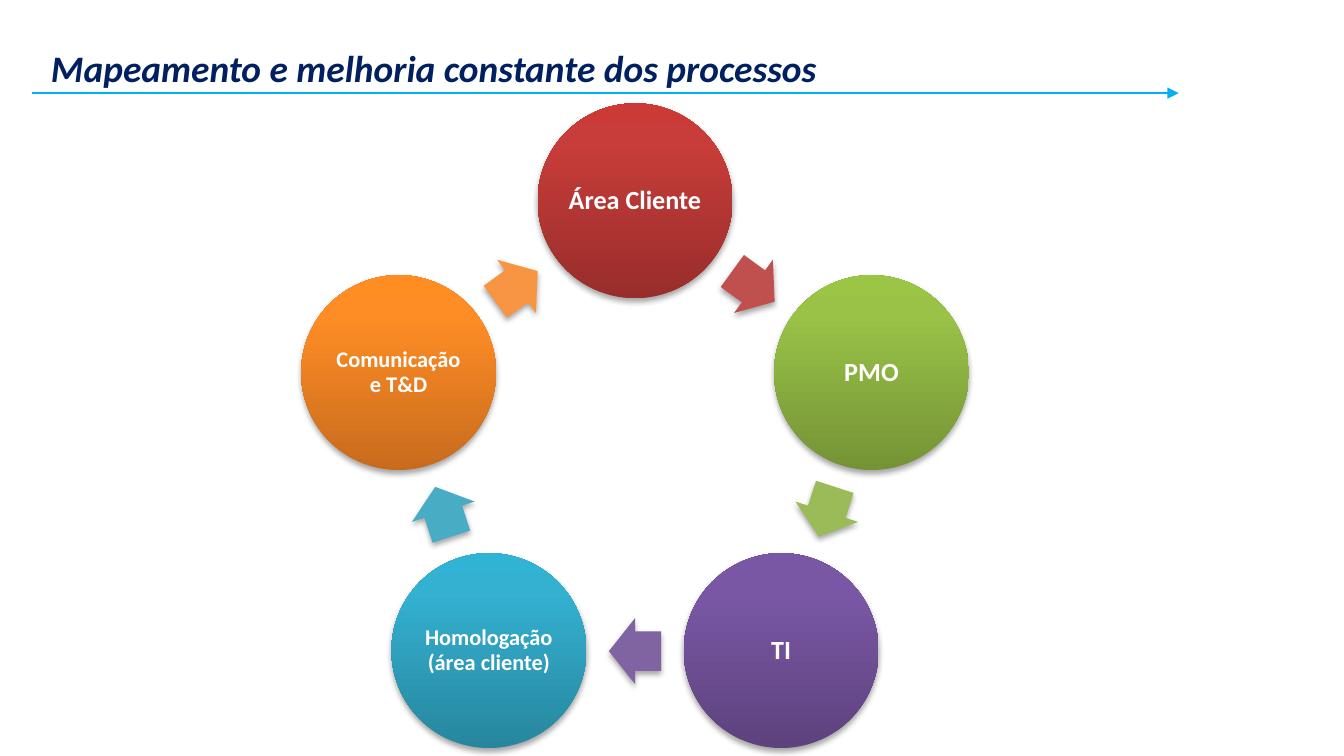
import copy
import math

import lxml.etree
import pptx
import pptx.dml.color
import pptx.enum.shapes
import pptx.enum.text
import pptx.oxml
import pptx.oxml.ns
import pptx.util

Pt = pptx.util.Pt
ShapeType = pptx.enum.shapes.MSO_SHAPE

COLORS = {"title": "002060", "rule": "00B0F0", "label": "FFFFFF", "shadow": "000000"}
STAGES = [
    ("Área Cliente", 14, ("982D2B", "C83D39", "CC3A36"), "BF504D"),
    ("PMO", 14, ("759336", "99C247", "9BC545"), "9BBB59"),
    ("TI", 14, ("5D427D", "7A57A5", "7A56A7"), "8064A2"),
    ("Homologação (área cliente)", 12, ("27869E", "34B0D0", "30B3D4"), "49ACC5"),
    ("Comunicação e T&D", 12, ("C86B1D", "FF8D25", "FF8D22"), "F79543"),
]
CENTER_X, CENTER_Y = 340.2, 240.8
RING_RADIUS, ARROW_RADIUS = 133.2, 108
CIRCLE_SIZE, LABEL_SIZE = 104.4, 74
ARROW_WIDTH, ARROW_HEIGHT = 28, 35.3


def rgb(color):
    return pptx.dml.color.RGBColor.from_string(color)


def ring_point(radius, degrees):
    angle = math.radians(degrees)
    return CENTER_X + radius * math.sin(angle), CENTER_Y - radius * math.cos(angle)


class CycleSlide:
    """Draws styled elements on the current slide, measured in points."""

    font_name = "Calibri"

    def __init__(self, slide):
        self.slide = slide

    def text(self, text, left, top, width, height, size, color, margins, italic=False):
        box = self.slide.shapes.add_textbox(Pt(left), Pt(top), Pt(width), Pt(height))
        frame = box.text_frame
        frame.word_wrap = True
        frame.margin_left = frame.margin_right = Pt(margins[0])
        frame.margin_top = frame.margin_bottom = Pt(margins[1])
        paragraph = frame.paragraphs[0]
        paragraph.text = text
        font = paragraph.font
        font.name, font.size, font.bold, font.italic = self.font_name, Pt(size), True, italic
        font.color.rgb = rgb(color)
        return frame

    def label(self, text, x, y, size):
        half = LABEL_SIZE / 2
        frame = self.text(text, x - half, y - half, LABEL_SIZE, LABEL_SIZE,
                          size, COLORS["label"], (1.4, 1.4))
        frame.vertical_anchor = pptx.enum.text.MSO_ANCHOR.MIDDLE
        frame.paragraphs[0].alignment = pptx.enum.text.PP_ALIGN.CENTER
        frame.paragraphs[0].line_spacing = 0.9

    def rule(self, start_x, end_x, y):
        connector = self.slide.shapes.add_connector(
            pptx.enum.shapes.MSO_CONNECTOR.STRAIGHT, Pt(start_x), Pt(y), Pt(end_x), Pt(y))
        connector.line.color.rgb = rgb(COLORS["rule"])
        connector.line.width = Pt(1)
        line = connector.line._get_or_add_ln()
        lxml.etree.SubElement(line, pptx.oxml.ns.qn("a:tailEnd"), type="triangle")
        properties = connector._element.spPr
        lxml.etree.SubElement(properties, pptx.oxml.ns.qn("a:effectLst"))

    def shaded_shape(self, kind, x, y, width, height):
        shape = self.slide.shapes.add_shape(
            kind, Pt(x - width / 2), Pt(y - height / 2), Pt(width), Pt(height))
        shape.line.fill.background()
        shape.shadow.inherit = False
        effects = shape._element.spPr.find(pptx.oxml.ns.qn("a:effectLst"))
        effects.append(pptx.oxml.parse_xml(
            f'<a:outerShdw {pptx.oxml.ns.nsdecls("a")} blurRad="{Pt(3.1)}" dist="{Pt(1.8)}" '
            f'dir="5400000" rotWithShape="0"><a:srgbClr val="{COLORS["shadow"]}">'
            '<a:alpha val="35000"/></a:srgbClr></a:outerShdw>'))
        return shape

    def circle(self, x, y, gradient):
        shape = self.shaded_shape(ShapeType.OVAL, x, y, CIRCLE_SIZE, CIRCLE_SIZE)
        shape.fill.gradient()
        shape.fill.gradient_angle = 90
        stop_list = next(shape._element.spPr.iter(pptx.oxml.ns.qn("a:gsLst")))
        stop_list.append(copy.deepcopy(stop_list[-1]))
        for stop, position, color in zip(shape.fill.gradient_stops, (0, 0.8, 1), gradient):
            stop.position = position
            stop.color.rgb = rgb(color)

    def arrow(self, x, y, rotation, color):
        shape = self.shaded_shape(ShapeType.RIGHT_ARROW, x, y, ARROW_WIDTH, ARROW_HEIGHT)
        shape.adjustments[0], shape.adjustments[1] = 0.6, 0.5
        shape.rotation = rotation
        shape.fill.solid()
        shape.fill.fore_color.rgb = rgb(color)


def main():
    presentation = pptx.Presentation()
    presentation.slide_width, presentation.slide_height = Pt(720), Pt(405)
    cycle = CycleSlide(presentation.slides.add_slide(presentation.slide_layouts[6]))
    cycle.text("Mapeamento e melhoria constante dos processos", 20.2, 20.9, 645, 31.5,
               20, COLORS["title"], (7.2, 3.6), italic=True)
    cycle.rule(17.3, 631.4, 49.9)
    step = 360 / len(STAGES)
    for index, (name, size, gradient, arrow_color) in enumerate(STAGES):
        x, y = ring_point(RING_RADIUS, index * step)
        cycle.circle(x, y, gradient)
        cycle.label(name, x, y, size)
        rotation = (index + 0.5) * step
        cycle.arrow(*ring_point(ARROW_RADIUS, rotation), rotation, arrow_color)
    presentation.save("out.pptx")


if __name__ == "__main__":
    main()
